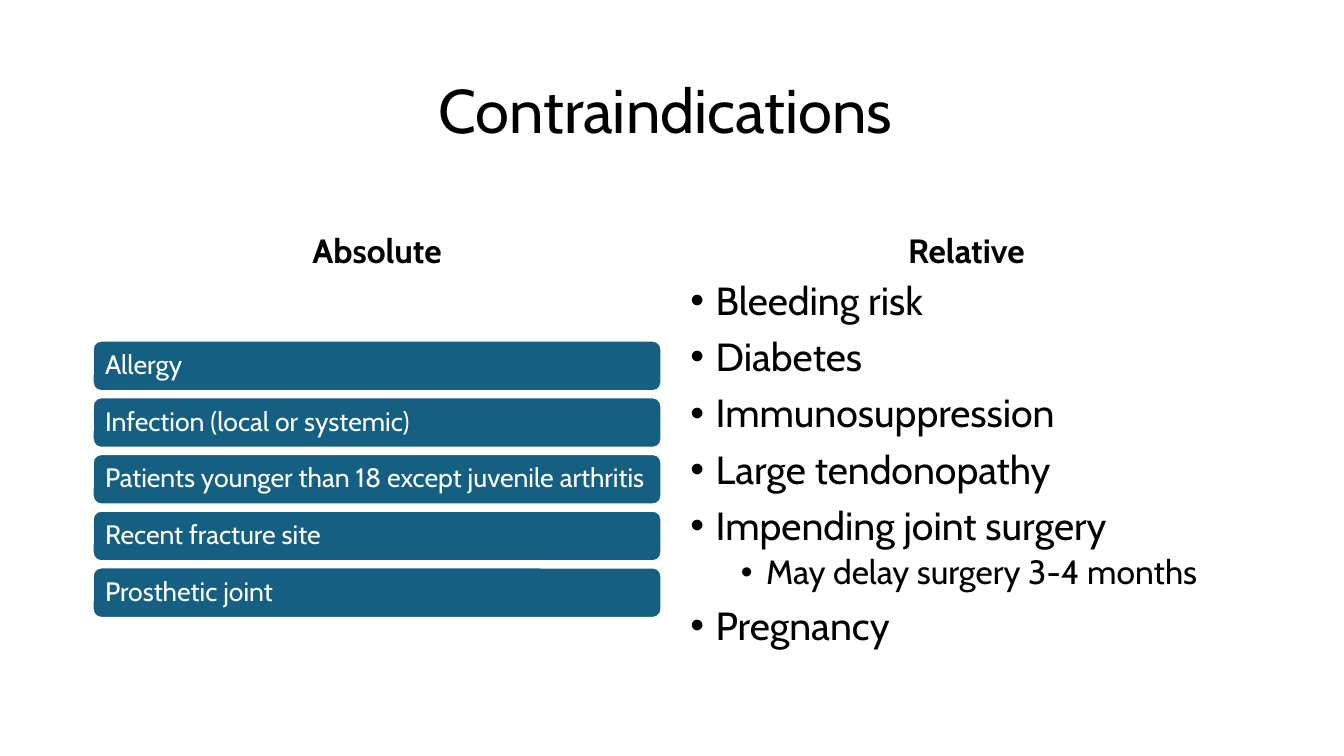
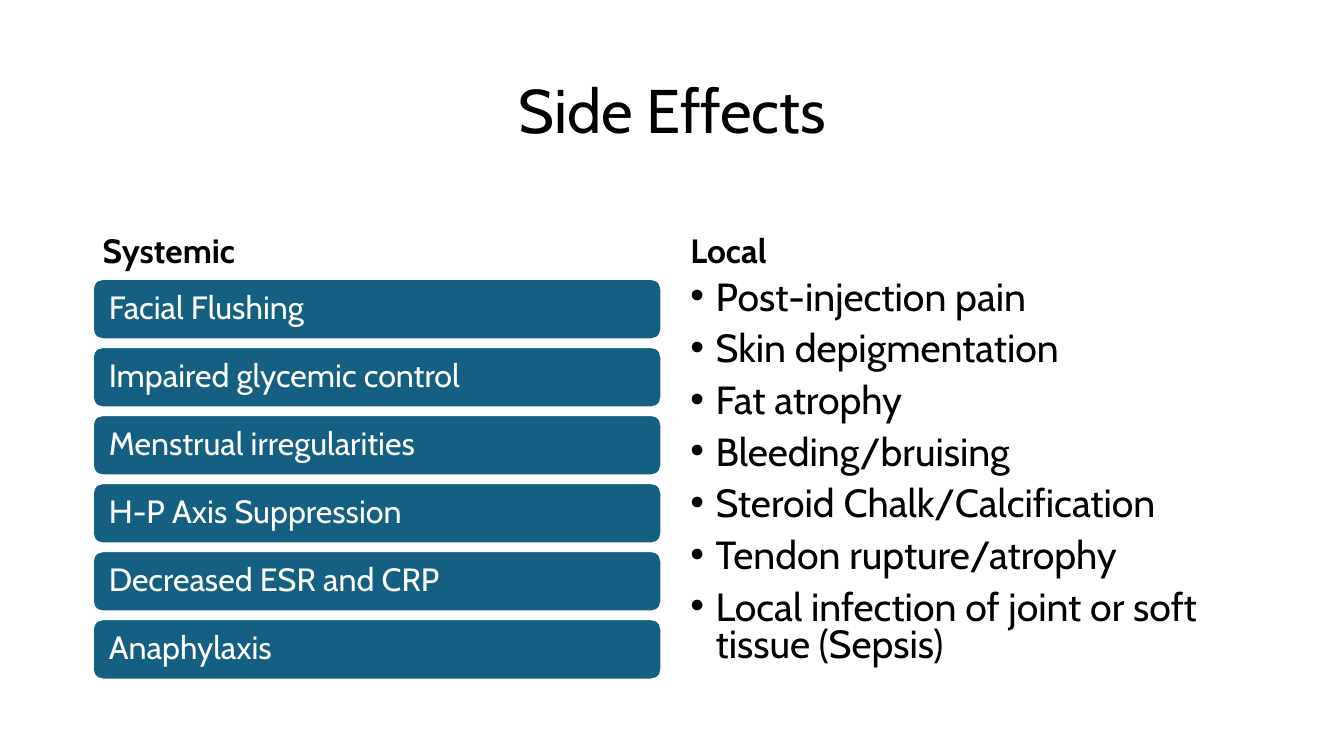
from lxml.etree import SubElement
from pptx import Presentation
from pptx.dml.color import RGBColor
from pptx.enum.shapes import MSO_SHAPE
from pptx.enum.text import MSO_ANCHOR, PP_ALIGN
from pptx.oxml.ns import qn
from pptx.util import Inches, Pt

BLACK = RGBColor(0x00, 0x00, 0x00)
WHITE = RGBColor(0xFF, 0xFF, 0xFF)
TEAL = RGBColor(0x15, 0x60, 0x82)

FULL, LEFT, RIGHT = (0.92, 11.5), (0.92, 5.64), (6.75, 5.67)
TITLE_ROW, HEAD_ROW, BODY_ROW = (0.4, 1.45), (1.84, 0.9), (2.74, 4.03)

TITLE = {"size": Pt(44), "name": "Cabin"}
HEAD = {"size": Pt(24), "name": "Cabin", "bold": True}
LEVELS = (
    {"size": Pt(28), "before": Pt(10), "indent": 0.25},
    {"size": Pt(24), "before": Pt(5), "indent": 0.75},
)
HANGING = 0.25


def set_all(obj, values):
    for name, value in values.items():
        setattr(obj, name, value)


def cell(col, row):
    x, w = col
    y, h = row
    return [Inches(v) for v in (x, y, w, h)]


def write(p, text, font, color=BLACK, **layout):
    r = p.add_run()
    r.text = text
    set_all(r.font, font)
    r.font.color.rgb = color
    set_all(p, {"line_spacing": 0.9, **layout})


def add_text(slide, col, row, anchor):
    tf = slide.shapes.add_textbox(*cell(col, row)).text_frame
    set_all(tf, {"word_wrap": True, "vertical_anchor": anchor})
    return tf


def add_label(slide, col, row, text, font, anchor, align):
    tf = add_text(slide, col, row, anchor)
    write(tf.paragraphs[0], text, font, alignment=align)


def add_bars(slide, items, height, size, inset):
    gap = height / 8
    pitch = height + gap
    top, room = BODY_ROW
    first = top + (room - len(items) * pitch + gap) / 2
    for i, text in enumerate(items):
        sp = slide.shapes.add_shape(
            MSO_SHAPE.ROUNDED_RECTANGLE, *cell(LEFT, (first + i * pitch, height)))
        sp.shadow.inherit = False
        sp.fill.solid()
        sp.fill.fore_color.rgb = TEAL
        sp.line.color.rgb = WHITE
        sp.line.width = Pt(1.5)
        tf = sp.text_frame
        set_all(tf, {"word_wrap": True, "vertical_anchor": MSO_ANCHOR.MIDDLE,
                     "margin_left": Inches(inset), "margin_right": Inches(inset),
                     "margin_top": 0, "margin_bottom": 0})
        write(tf.paragraphs[0], text, {"size": Pt(size), "name": "Cabin"},
              WHITE, alignment=PP_ALIGN.LEFT)


def add_bullet(p, indent):
    pPr = p._p.get_or_add_pPr()
    pPr.set("marL", str(Inches(indent)))
    pPr.set("indent", str(-Inches(HANGING)))
    SubElement(pPr, qn("a:buFont"), typeface="Arial")
    SubElement(pPr, qn("a:buChar"), char="•")


def add_bullets(slide, items, spacing):
    tf = add_text(slide, RIGHT, BODY_ROW, MSO_ANCHOR.TOP)
    for i, (level, text) in enumerate(items):
        p = tf.add_paragraph() if i else tf.paragraphs[0]
        style = LEVELS[level]
        add_bullet(p, style["indent"])
        write(p, text, {"size": style["size"], "name": "Cabin"}, level=level,
              line_spacing=spacing, space_before=style["before"] if i else Pt(0))


def add_comparison(prs, title, heads, align):
    slide = prs.slides.add_slide(prs.slide_layouts[6])
    add_label(slide, FULL, TITLE_ROW, title, TITLE, MSO_ANCHOR.MIDDLE, PP_ALIGN.CENTER)
    for col, head in zip((LEFT, RIGHT), heads):
        add_label(slide, col, HEAD_ROW, head, HEAD, MSO_ANCHOR.BOTTOM, align)
    return slide


def main():
    prs = Presentation()
    set_all(prs, {"slide_width": Inches(13.33), "slide_height": Inches(7.5)})

    slide = add_comparison(prs, "Contraindications ", ("Absolute", "Relative"),
                           PP_ALIGN.CENTER)
    add_bars(slide, ("Allergy", "Infection (local or systemic)",
                     "Patients younger than 18 except juvenile arthritis",
                     "Recent fracture site", "Prosthetic joint"),
             height=0.5, size=19, inset=0.1)
    add_bullets(slide, ((0, "Bleeding risk"), (0, "Diabetes"),
                        (0, "Immunosuppression"), (0, "Large tendonopathy"),
                        (0, "Impending joint surgery"),
                        (1, "May delay surgery 3-4 months"), (0, "Pregnancy")),
                spacing=0.9)

    slide = add_comparison(prs, "Side Effects", ("Systemic", "Local"), PP_ALIGN.LEFT)
    add_bars(slide, ("Facial Flushing", "Impaired glycemic control",
                     "Menstrual irregularities", "H-P Axis Suppression",
                     "Decreased ESR and CRP", "Anaphylaxis"),
             height=0.6, size=23, inset=0.13)
    add_bullets(slide, [(0, text) for text in (
        "Post-injection pain", "Skin depigmentation", "Fat atrophy",
        "Bleeding/bruising", "Steroid Chalk/Calcification",
        "Tendon rupture/atrophy",
        "Local infection of joint or soft tissue (Sepsis)")], spacing=0.8)

    prs.save("out.pptx")


if __name__ == "__main__":
    main()
